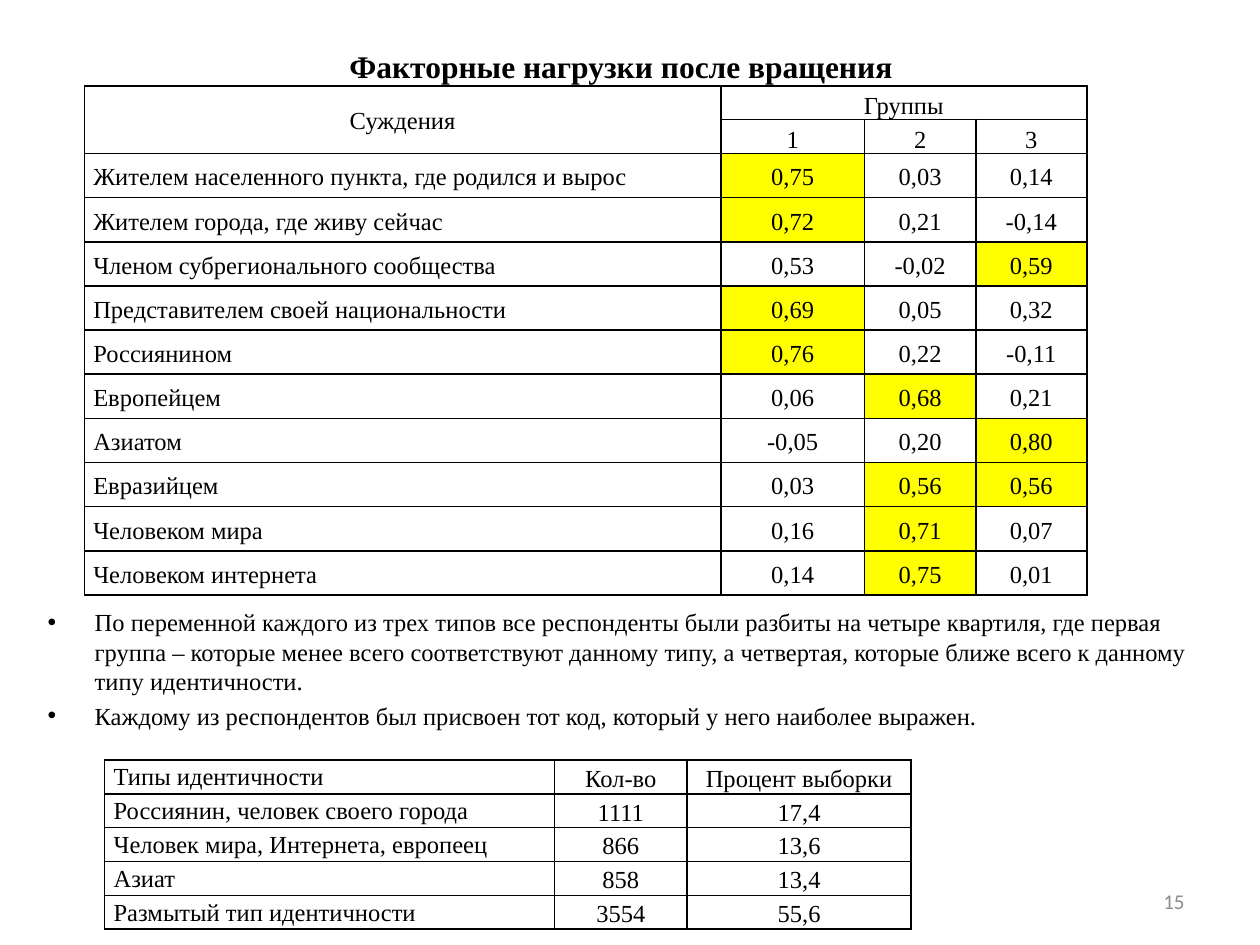
from lxml import etree
from pptx import Presentation
from pptx.dml.color import RGBColor
from pptx.enum.text import MSO_ANCHOR, PP_ALIGN
from pptx.oxml.ns import qn
from pptx.util import Cm, Pt

LEFT, CENTER, RIGHT, JUSTIFY = PP_ALIGN.LEFT, PP_ALIGN.CENTER, PP_ALIGN.RIGHT, PP_ALIGN.JUSTIFY
TOP, MIDDLE, BOTTOM = MSO_ANCHOR.TOP, MSO_ANCHOR.MIDDLE, MSO_ANCHOR.BOTTOM
BLACK, GRAY, YELLOW = "000000", "8C8C8C", "FFFF00"
HIGH_LOADING = 0.55

LOADINGS = [
    ("Жителем населенного пункта, где родился и вырос", "0,75", "0,03", "0,14"),
    ("Жителем города, где живу сейчас", "0,72", "0,21", "-0,14"),
    ("Членом субрегионального сообщества", "0,53", "-0,02", "0,59"),
    ("Представителем своей национальности", "0,69", "0,05", "0,32"),
    ("Россиянином", "0,76", "0,22", "-0,11"),
    ("Европейцем", "0,06", "0,68", "0,21"),
    ("Азиатом", "-0,05", "0,20", "0,80"),
    ("Евразийцем", "0,03", "0,56", "0,56"),
    ("Человеком мира", "0,16", "0,71", "0,07"),
    ("Человеком интернета", "0,14", "0,75", "0,01"),
]
IDENTITY_TYPES = [
    ("Типы идентичности", "Кол-во", "Процент выборки"),
    ("Россиянин, человек своего города", "1111", "17,4"),
    ("Человек мира, Интернета, европеец", "866", "13,6"),
    ("Азиат", "858", "13,4"),
    ("Размытый тип идентичности", "3554", "55,6"),
]
NOTES = [
    "По переменной каждого из трех типов все респонденты были разбиты на четыре квартиля, "
    "где первая группа – которые менее всего соответствуют данному типу, а четвертая, "
    "которые ближе всего к данному типу идентичности.",
    "Каждому из респондентов был присвоен тот код, который у него наиболее выражен.",
]


def color(hex_code):
    return RGBColor.from_string(hex_code)


class SlideBuilder:
    font, size = "Times New Roman", 14

    def __init__(self, slide):
        self.slide = slide

    def run(self, paragraph, text, size=None, bold=False, ink=BLACK, font=None):
        run = paragraph.add_run()
        run.text = text
        run.font.name = font or self.font
        run.font.size = Pt(size or self.size)
        run.font.bold = bold
        run.font.color.rgb = color(ink)

    def frame(self, left, top, width, height, anchor=MIDDLE):
        box = self.slide.shapes.add_textbox(Cm(left), Cm(top), Cm(width), Cm(height))
        box.text_frame.word_wrap = True
        box.text_frame.vertical_anchor = anchor
        return box.text_frame

    def line(self, place, text, align, **style):
        paragraph = self.frame(*place).paragraphs[0]
        paragraph.alignment = align
        self.run(paragraph, text, **style)

    def bullets(self, place, texts):
        frame = self.frame(*place, anchor=TOP)
        for index, text in enumerate(texts):
            paragraph = frame.add_paragraph() if index else frame.paragraphs[0]
            paragraph.alignment = LEFT
            paragraph.space_before = Pt(2.8)
            properties = paragraph._p.get_or_add_pPr()
            properties.set("marL", str(Cm(0.95)))
            properties.set("indent", str(-Cm(0.95)))
            etree.SubElement(properties, qn("a:buFont"), typeface="Arial")
            etree.SubElement(properties, qn("a:buChar"), char="•")
            self.run(paragraph, text)

    def table(self, left, top, widths, heights):
        grid = self.slide.shapes.add_table(
            len(heights), len(widths), Cm(left), Cm(top), Cm(sum(widths)), Cm(sum(heights))).table
        grid.first_row = grid.horz_banding = False
        for column, width in zip(grid.columns, widths):
            column.width = Cm(width)
        for row, height in zip(grid.rows, heights):
            row.height = Cm(height)
        for cell in grid.iter_cells():
            self.borders(cell)
            cell.fill.background()
            cell.margin_left = cell.margin_right = Cm(0.18)
            cell.margin_top = cell.margin_bottom = 0
        return grid

    def borders(self, cell):
        properties = cell._tc.get_or_add_tcPr()
        for side in ("lnL", "lnR", "lnT", "lnB"):
            edge = etree.SubElement(properties, qn(f"a:{side}"), w=str(Pt(1)))
            fill = etree.SubElement(edge, qn("a:solidFill"))
            etree.SubElement(fill, qn("a:srgbClr"), val=BLACK)

    def cell(self, cell, text, align=CENTER, anchor=MIDDLE, fill=None):
        cell.vertical_anchor = anchor
        paragraph = cell.text_frame.paragraphs[0]
        paragraph.alignment = align
        paragraph.line_spacing = 1.15
        self.run(paragraph, text)
        if fill:
            cell.fill.solid()
            cell.fill.fore_color.rgb = color(fill)


def main():
    deck = Presentation()
    deck.slide_width, deck.slide_height = Cm(25.4), Cm(19.05)
    page = SlideBuilder(deck.slides.add_slide(deck.slide_layouts[6]))

    # Title
    page.line((1.09, 0.33, 22.86, 2), "Факторные нагрузки после вращения", CENTER, size=18, bold=True)

    # Factor loadings: two header rows, then one row per statement
    loadings = page.table(1.7, 1.73, [12.83, 2.9, 2.24, 2.24], [0.61, 0.56] + [0.89] * len(LOADINGS))
    loadings.cell(0, 0).merge(loadings.cell(1, 0))
    loadings.cell(0, 1).merge(loadings.cell(0, 3))
    page.cell(loadings.cell(0, 0), "Суждения")
    page.cell(loadings.cell(0, 1), "Группы", anchor=BOTTOM)
    for group in (1, 2, 3):
        page.cell(loadings.cell(1, group), str(group), anchor=BOTTOM)
    for row, (statement, *values) in enumerate(LOADINGS, start=2):
        page.cell(loadings.cell(row, 0), statement, JUSTIFY)
        for group, value in enumerate(values, start=1):
            is_high = float(value.replace(",", ".")) >= HIGH_LOADING
            page.cell(loadings.cell(row, group), value, fill=YELLOW if is_high else None)

    # Identity types
    types = page.table(2.11, 15.32, [9.07, 2.67, 4.52], [0.53] * len(IDENTITY_TYPES))
    for row, (identity, *figures) in enumerate(IDENTITY_TYPES):
        page.cell(types.cell(row, 0), identity, JUSTIFY, TOP)
        for column, figure in enumerate(figures, start=1):
            page.cell(types.cell(row, column), figure)

    # Notes between the tables
    page.bullets((0.71, 12.12, 24.2, 2.39), NOTES)

    # Slide number
    page.line((18.21, 17.65, 5.92, 1.02), "15", RIGHT, size=12, ink=GRAY, font="Calibri")

    deck.save("out.pptx")


if __name__ == "__main__":
    main()
